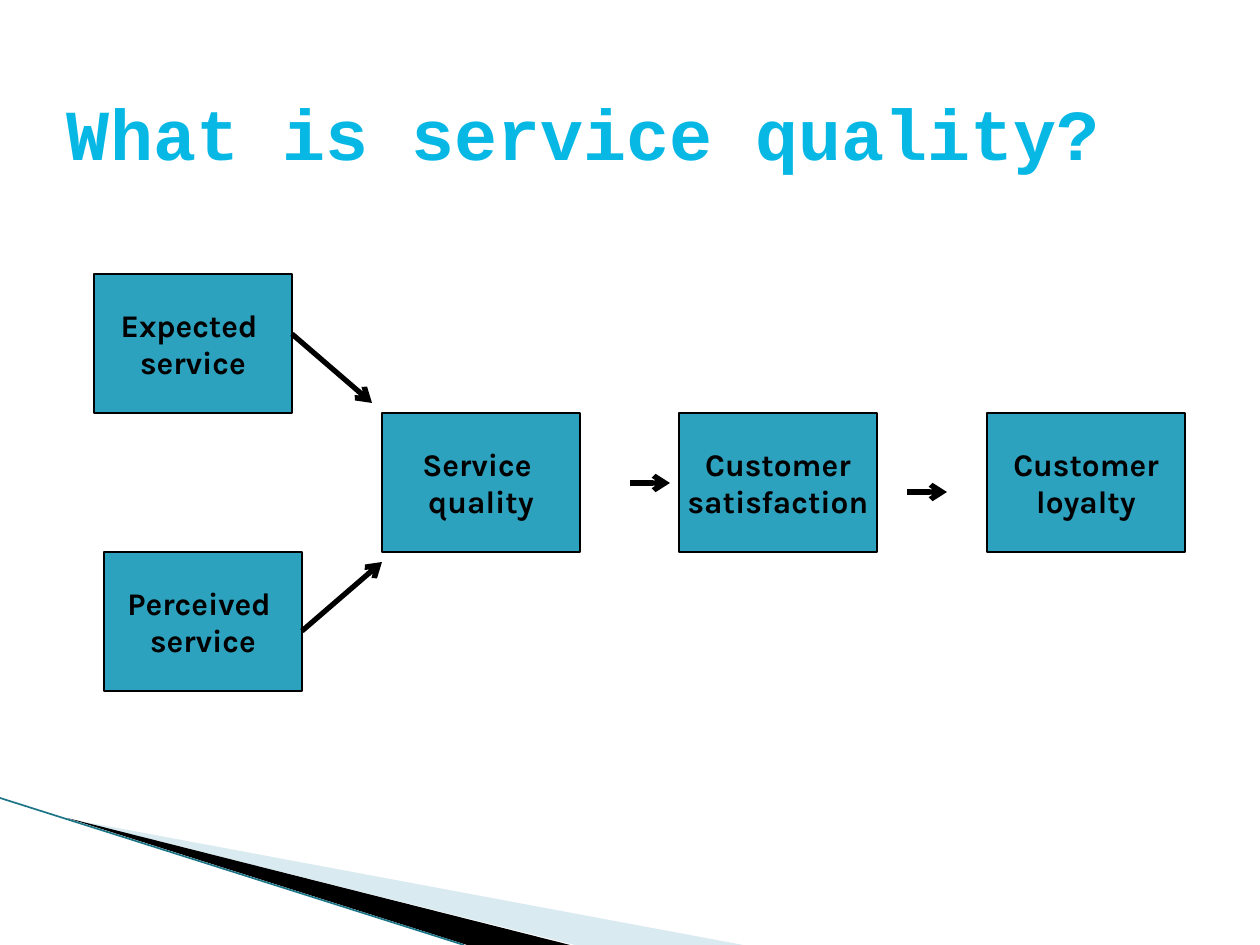
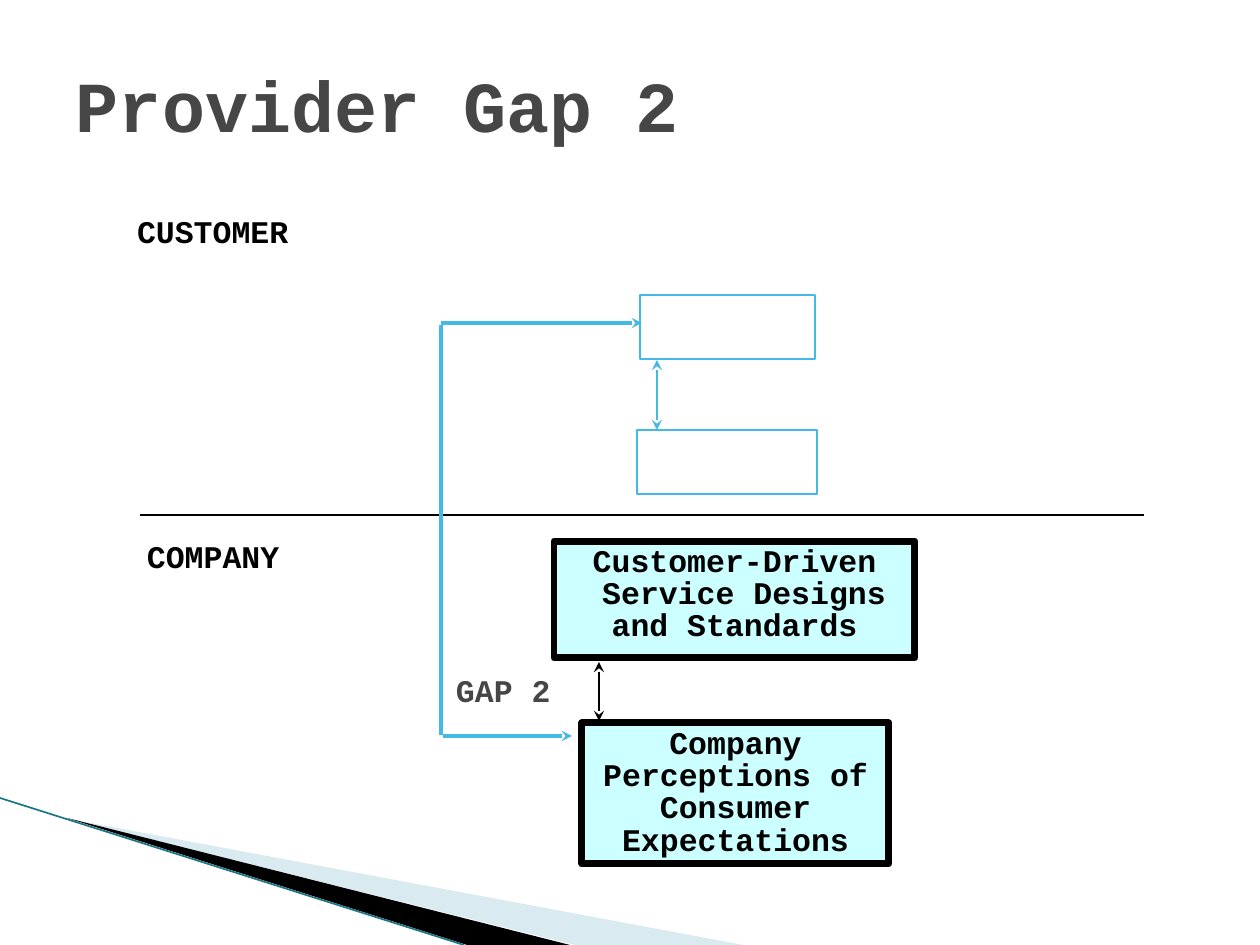
from dataclasses import dataclass

from lxml import etree
from pptx import Presentation
from pptx.dml.color import RGBColor
from pptx.enum.shapes import MSO_CONNECTOR, MSO_SHAPE
from pptx.enum.text import MSO_ANCHOR, PP_ALIGN
from pptx.oxml.ns import qn
from pptx.util import Pt

RECTANGLE = MSO_SHAPE.RECTANGLE
STRAIGHT = MSO_CONNECTOR.STRAIGHT
TOP, MIDDLE = MSO_ANCHOR.TOP, MSO_ANCHOR.MIDDLE
LEFT, CENTER = PP_ALIGN.LEFT, PP_ALIGN.CENTER

EMU_PER_PX = 914400 / 126
PAGE_WIDTH, PAGE_HEIGHT = 1260, 945


@dataclass(frozen=True)
class Theme:
    black: str = "000000"
    white: str = "FFFFFF"
    grey: str = "464646"
    title_blue: str = "08B8E4"
    step_teal: str = "2DA2BF"
    gap_blue: str = "44B9E8"
    company_cyan: str = "CCFFFF"
    wedge_pale: str = "A0CBDC"
    wedge_edge: str = "1B7587"
    mono: str = "Courier New"
    sans: str = "Karla"
    title_size: int = 41
    body_size: int = 18


THEME = Theme()


def px(length):
    return round(length * EMU_PER_PX)


def rgb(value):
    return RGBColor.from_string(value)


def write_text(frame, paragraphs, *, font=THEME.mono, size=THEME.body_size,
               color=THEME.black, align=LEFT, anchor=TOP, wrap=True,
               insets=(13, 6), spacing=None):
    frame.word_wrap = wrap
    frame.vertical_anchor = anchor
    frame.margin_left = frame.margin_right = px(insets[0])
    frame.margin_top = frame.margin_bottom = px(insets[1])
    for index, text in enumerate(paragraphs):
        para = frame.paragraphs[0] if index == 0 else frame.add_paragraph()
        para.text = text
        para.alignment = align
        if spacing:
            para.line_spacing = spacing
        for span in para.runs:
            span.font.name = font
            span.font.size = Pt(size)
            span.font.bold = True
            span.font.color.rgb = rgb(color)


def add_label(page, text, left, top, width, height, **text_format):
    box = page.shapes.add_textbox(px(left), px(top), px(width), px(height))
    write_text(box.text_frame, [text], **text_format)


def add_title(page, text, left, top, color):
    add_label(page, text, left, top, 1134, 160, size=THEME.title_size,
              color=color, insets=(13, 23))


def add_box(page, left, top, width, height, fill, line, weight):
    box = page.shapes.add_shape(RECTANGLE, px(left), px(top), px(width), px(height))
    box.shadow.inherit = False
    box.fill.solid()
    box.fill.fore_color.rgb = rgb(fill)
    box.line.color.rgb = rgb(line)
    box.line.width = Pt(weight)
    return box


def add_line(page, start, end, color, weight, head=None, tail=None):
    connector = page.shapes.add_connector(STRAIGHT, *map(px, start + end))
    connector.line.color.rgb = rgb(color)
    connector.line.width = Pt(weight)
    outline = connector.line._get_or_add_ln()
    for tag, kind in (("a:headEnd", head), ("a:tailEnd", tail)):
        if kind:
            etree.SubElement(outline, qn(tag), type=kind)
    etree.SubElement(connector._element.spPr, qn("a:effectLst"))


def add_wedge(page, points, color, opacity=100):
    builder = page.shapes.build_freeform(*points[0], scale=EMU_PER_PX)
    builder.add_line_segments(points[1:])
    wedge = builder.convert_to_shape()
    wedge.shadow.inherit = False
    wedge.line.fill.background()
    wedge.fill.solid()
    wedge.fill.fore_color.rgb = rgb(color)
    if opacity < 100:
        tint = wedge._element.spPr.find(qn("a:solidFill"))[0]
        etree.SubElement(tint, qn("a:alpha"), val=str(opacity * 1000))


def add_page(deck):
    page = deck.slides.add_slide(deck.slide_layouts[6])
    add_wedge(page, [(69, 819), (743, 945), (575, 945)], THEME.wedge_pale, 40)
    add_wedge(page, [(67, 818), (570, 945), (467, 945)], THEME.black)
    add_line(page, (0, 798), (464, 945), THEME.wedge_edge, 0.95)
    return page


def add_step(page, text, left, top):
    box = add_box(page, left, top, 198, 139, THEME.step_teal, THEME.black, 0.75)
    write_text(box.text_frame, [text], font=THEME.sans, align=CENTER,
               anchor=MIDDLE, wrap=False)


def add_company_box(page, paragraphs, left, top, width, height):
    box = add_box(page, left, top, width, height,
                  THEME.company_cyan, THEME.black, 4)
    write_text(box.text_frame, paragraphs, align=CENTER, spacing=0.85)


def build_quality_page(deck):
    page = add_page(deck)
    add_title(page, "What is service quality?", 54, 66, THEME.title_blue)
    steps = [
        ("Expected \vservice", 94, 274),
        ("Perceived \vservice", 104, 552),
        ("Service \vquality", 382, 413),
        ("Customer\vsatisfaction", 679, 413),
        ("Customer\vloyalty", 987, 413),
    ]
    for step in steps:
        add_step(page, *step)
    arrows = [
        ((292, 334), (372, 403)),
        ((302, 631), (382, 562)),
        ((630, 483), (670, 483)),
        ((907, 492), (947, 492)),
    ]
    for start, end in arrows:
        add_line(page, start, end, THEME.black, 3, tail="arrow")


def build_gap_page(deck):
    page = add_page(deck)
    add_line(page, (140, 515), (1144, 515), THEME.black, 1)
    for left, top, width in ((637, 430, 180), (640, 295, 175)):
        add_box(page, left, top, width, 64, THEME.white, THEME.gap_blue, 1)
    labels = [
        ("CUSTOMER", 131, 209, 193, THEME.black),
        ("COMPANY", 141, 534, 174, THEME.black),
        ("GAP 2", 450, 668, 107, THEME.grey),
    ]
    for text, left, top, width, color in labels:
        add_label(page, text, left, top, width, 43, color=color,
                  wrap=False, insets=(6, 3))
    lines = [
        ((443, 736), (572, 736), THEME.gap_blue, 2, None, "stealth"),
        ((441, 323), (642, 323), THEME.gap_blue, 2, None, "stealth"),
        ((657, 360), (657, 430), THEME.gap_blue, 1, "stealth", "stealth"),
        ((599, 662), (599, 721), THEME.black, 1, "stealth", "stealth"),
    ]
    for line in lines:
        add_line(page, *line)
    add_company_box(page, ["Customer-Driven", " Service Designs and Standards"],
                    554, 541, 361, 117)
    add_company_box(page, ["Company Perceptions of Consumer Expectations"],
                    582, 723, 307, 141)
    add_line(page, (441, 325), (441, 735), THEME.gap_blue, 2)
    add_title(page, "Provider Gap 2", 63, 38, THEME.grey)


def main():
    deck = Presentation()
    deck.slide_width = px(PAGE_WIDTH)
    deck.slide_height = px(PAGE_HEIGHT)
    build_quality_page(deck)
    build_gap_page(deck)
    deck.save("out.pptx")


if __name__ == "__main__":
    main()
